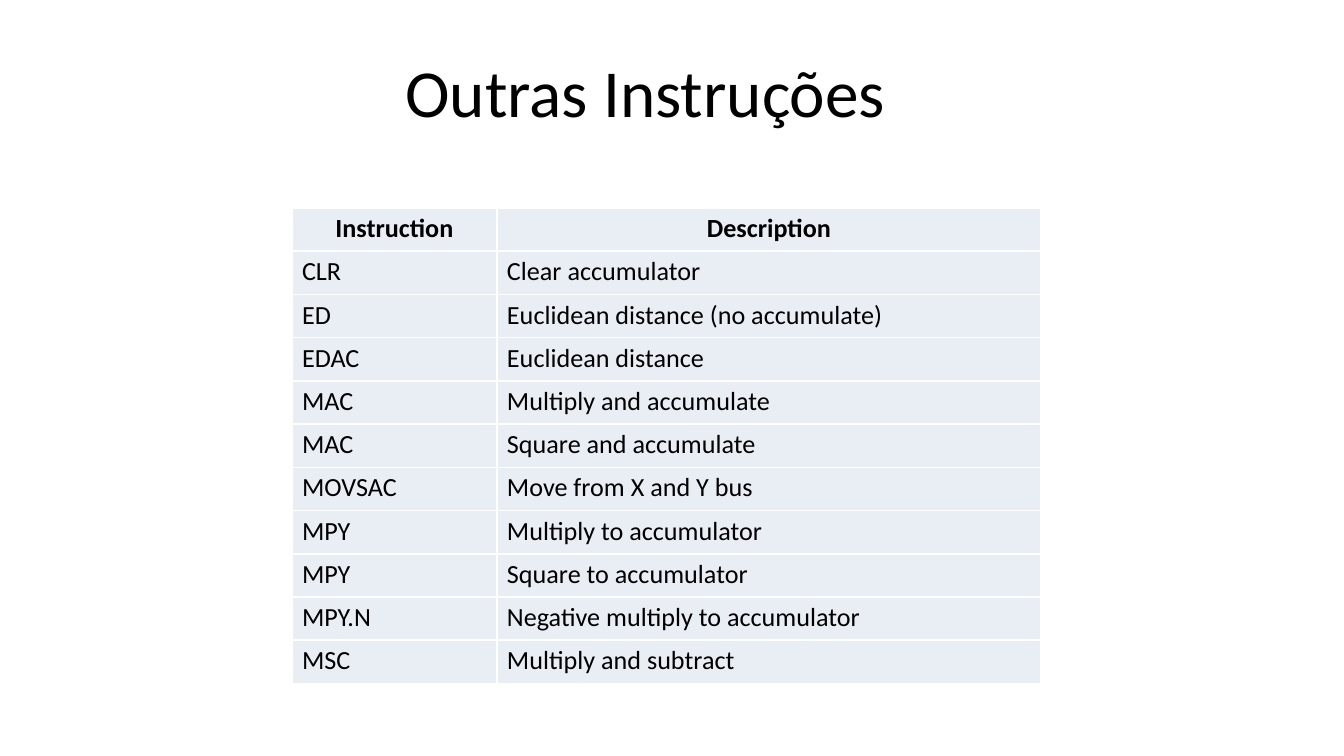
from dataclasses import dataclass

from lxml.etree import SubElement
from pptx import Presentation
from pptx.dml.color import RGBColor
from pptx.enum.text import MSO_ANCHOR, PP_ALIGN
from pptx.oxml.ns import qn
from pptx.util import Pt

EMU_PER_PX = 6804


@dataclass(frozen=True)
class Theme:
    font: str = "Calibri"
    text: str = "000000"
    cell: str = "E9EDF4"
    border: str = "FFFFFF"
    title_size: int = 36
    table_size: int = 14
    border_width: int = 1


THEME = Theme()

HEADER = ("Instruction", "Description")
INSTRUCTIONS = [
    ("CLR", "Clear accumulator"),
    ("ED", "Euclidean distance (no accumulate)"),
    ("EDAC", "Euclidean distance"),
    ("MAC", "Multiply and accumulate"),
    ("MAC", "Square and accumulate"),
    ("MOVSAC", "Move from X and Y bus"),
    ("MPY", "Multiply to accumulator"),
    ("MPY", "Square to accumulator"),
    ("MPY.N", "Negative multiply to accumulator"),
    ("MSC", "Multiply and subtract"),
]


def px(length):
    return length * EMU_PER_PX


def write_text(text_frame, text, *, size, bold=False,
               align=PP_ALIGN.LEFT, line_spacing=1.0):
    paragraph = text_frame.paragraphs[0]
    paragraph.alignment = align
    paragraph.line_spacing = line_spacing
    run = paragraph.add_run()
    run.text = text
    run.font.name = THEME.font
    run.font.size = Pt(size)
    run.font.bold = bold
    run.font.color.rgb = RGBColor.from_string(THEME.text)


def add_title(slide, text, left, top, width, height):
    text_frame = slide.shapes.add_textbox(
        px(left), px(top), px(width), px(height)).text_frame
    text_frame.word_wrap = True
    text_frame.vertical_anchor = MSO_ANCHOR.MIDDLE
    write_text(text_frame, text, size=THEME.title_size, align=PP_ALIGN.CENTER)


def set_borders(cell):
    properties = cell._tc.get_or_add_tcPr()
    # Border lines must come before the fill
    for position, side in enumerate(("lnL", "lnR", "lnT", "lnB")):
        line = SubElement(properties, qn(f"a:{side}"),
                          w=str(Pt(THEME.border_width)))
        fill = SubElement(line, qn("a:solidFill"))
        SubElement(fill, qn("a:srgbClr"), val=THEME.border)
        properties.insert(position, line)


def format_cell(cell):
    cell.margin_left = cell.margin_right = px(10)
    cell.margin_top = cell.margin_bottom = 0
    cell.fill.solid()
    cell.fill.fore_color.rgb = RGBColor.from_string(THEME.cell)
    set_borders(cell)


def add_table(slide, rows, left, top, column_widths, height):
    table = slide.shapes.add_table(
        len(rows), len(column_widths), px(left), px(top),
        px(sum(column_widths)), px(height)).table
    for column, width in zip(table.columns, column_widths):
        column.width = px(width)
    for row_index, (row, texts) in enumerate(zip(table.rows, rows)):
        row.height = px(height) // len(rows)
        is_header = row_index == 0
        for cell, text in zip(row.cells, texts):
            format_cell(cell)
            write_text(cell.text_frame, text, size=THEME.table_size,
                       bold=is_header, line_spacing=1.15,
                       align=PP_ALIGN.CENTER if is_header else PP_ALIGN.LEFT)


def main():
    presentation = Presentation()
    presentation.slide_width = px(1344)
    presentation.slide_height = px(756)
    slide = presentation.slides.add_slide(presentation.slide_layouts[6])

    # Title
    add_title(slide, "Outras Instruções", 132, 28, 1027, 126)

    # Instruction table
    add_table(slide, [HEADER, *INSTRUCTIONS], 292, 208, (205, 544), 476)

    presentation.save("out.pptx")


if __name__ == "__main__":
    main()
